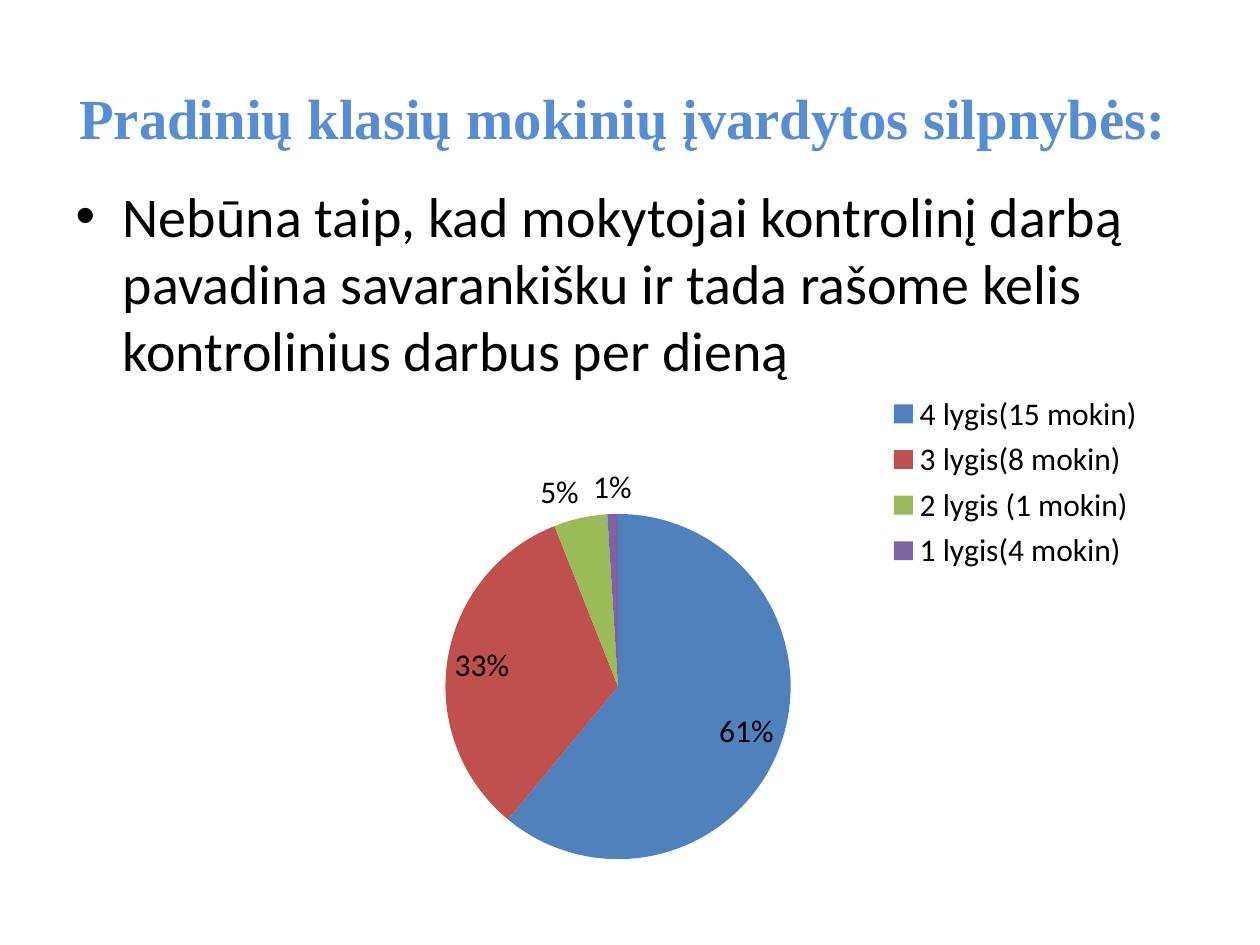
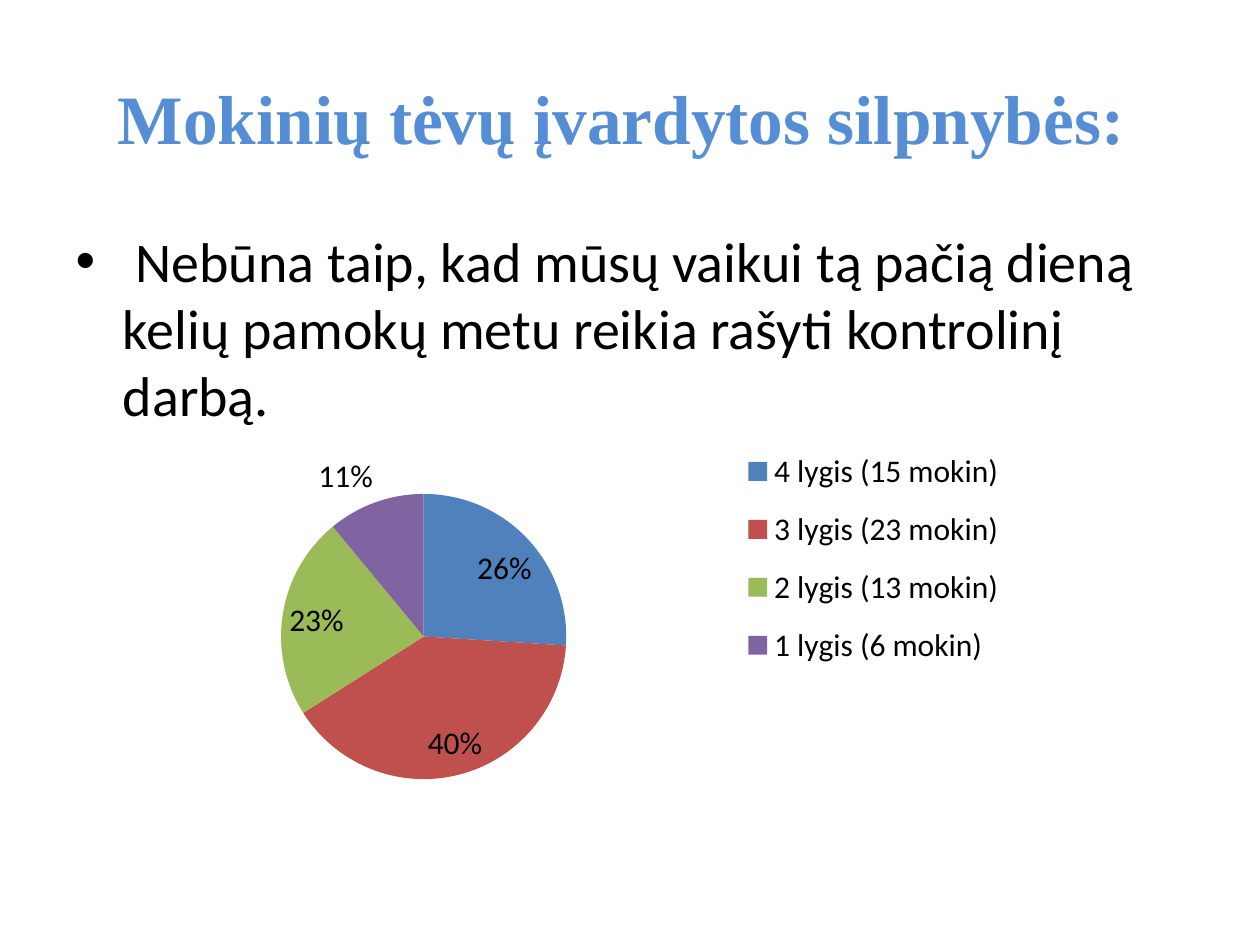
from dataclasses import dataclass

from lxml.etree import SubElement
from pptx import Presentation
from pptx.chart.data import CategoryChartData
from pptx.dml.color import RGBColor
from pptx.enum.chart import XL_CHART_TYPE as ChartType
from pptx.enum.chart import XL_LABEL_POSITION as LabelPos
from pptx.enum.chart import XL_LEGEND_POSITION as LegendPos
from pptx.enum.text import MSO_ANCHOR as Anchor
from pptx.enum.text import MSO_AUTO_SIZE as AutoSize
from pptx.enum.text import PP_ALIGN as Align
from pptx.oxml.ns import qn
from pptx.util import Inches, Pt

GRID = 10  # columns and rows on a slide


@dataclass(frozen=True)
class Theme:
    title_font: str = "Times New Roman"
    body_font: str = "Calibri"
    title_color: str = "558ED5"
    text_color: str = "000000"
    background: str = "FFFFFF"
    slices: tuple = ("4F81BD", "C0504D", "9BBB59", "8064A2")
    body_size: float = 32
    chart_size: float = 18


def style_font(font, name, size, color, bold=False):
    font.name, font.size, font.bold = name, Pt(size), bold
    font.color.rgb = RGBColor.from_string(color)


def write(shape, text, *, align=None, anchor=None, **font):
    tf = shape.text_frame
    tf.word_wrap, tf.auto_size = True, AutoSize.NONE
    if anchor is not None:
        tf.vertical_anchor = anchor
    p = tf.paragraphs[0]
    p.alignment = align
    r = p.add_run()
    r.text = text
    style_font(r.font, **font)


def set_layout(parent, index, box, inner=False):
    """Place a chart part by hand; box is x, y, w, h as shares of the chart."""
    for old in parent.findall(qn("c:layout")):
        parent.remove(old)
    layout = SubElement(parent, qn("c:layout"))
    parent.insert(index, layout)
    manual = SubElement(layout, qn("c:manualLayout"))
    settings = [("layoutTarget", "inner")] if inner else []
    settings += [("xMode", "edge"), ("yMode", "edge"), *zip("xywh", box)]
    for tag, value in settings:
        SubElement(manual, qn(f"c:{tag}")).set("val", str(value))


class Deck:
    def __init__(self, theme):
        self.theme = theme
        self.prs = Presentation()
        self.prs.slide_width, self.prs.slide_height = Inches(10), Inches(7.5)
        self.s = None

    def area(self, col, row, cols, rows):
        cw, rh = self.prs.slide_width / GRID, self.prs.slide_height / GRID
        return [round(v) for v in (col * cw, row * rh, cols * cw, rows * rh)]

    def place(self, sp, box):
        sp.left, sp.top, sp.width, sp.height = self.area(*box)

    def new_slide(self):
        self.s = self.prs.slides.add_slide(self.prs.slide_layouts[1])
        fill = self.s.background.fill
        fill.solid()
        fill.fore_color.rgb = RGBColor.from_string(self.theme.background)

    def title(self, text, size):
        sp = self.s.shapes.title
        self.place(sp, (0.5, 0.4, 9, 1.67))
        write(sp, text, align=Align.CENTER, anchor=Anchor.MIDDLE, size=size, bold=True,
              name=self.theme.title_font, color=self.theme.title_color)

    def body(self, text, row):
        sp = self.s.placeholders[1]
        self.place(sp, (0.5, row, 9, 8.93 - row))
        write(sp, text, name=self.theme.body_font, size=self.theme.body_size,
              color=self.theme.text_color)

    def pie(self, box, levels, plot_box, legend_box):
        data = CategoryChartData()
        data.categories = levels.keys()
        data.add_series("Series 1", levels.values())
        chart = self.s.shapes.add_chart(ChartType.PIE, *self.area(*box), data).chart
        style_font(chart.font, self.theme.body_font, self.theme.chart_size,
                   self.theme.text_color)
        chart.has_title = False

        plot = chart.plots[0]
        plot.vary_by_categories = True
        for i, color in enumerate(self.theme.slices):
            fill = plot.series[0].points[i].format.fill
            fill.solid()
            fill.fore_color.rgb = RGBColor.from_string(color)
        plot.has_data_labels = True
        labels = plot.data_labels
        labels.show_percentage, labels.show_value = True, False
        labels.number_format, labels.number_format_is_linked = "0%", False
        labels.position = LabelPos.BEST_FIT

        chart.has_legend = True
        legend = chart.legend
        legend.position, legend.include_in_layout = LegendPos.TOP, False
        chart_xml = chart.element
        set_layout(chart_xml.find(".//" + qn("c:plotArea")), 0, plot_box, inner=True)
        set_layout(chart_xml.find(".//" + qn("c:legend")), 1, legend_box)


def main():
    deck = Deck(Theme())

    deck.new_slide()
    deck.title("Pradinių klasių mokinių įvardytos silpnybės: ", 32.4)
    deck.body("Nebūna taip, kad mokytojai kontrolinį darbą pavadina savarankišku "
              "ir tada rašome kelis kontrolinius darbus per dieną", row=1.85)
    deck.pie((1.22, 3.43, 8.19, 6.09),
             {"4 lygis(15 mokin)": 61, "3 lygis(8 mokin)": 33,
              "2 lygis (1 mokin)": 5, "1 lygis(4 mokin)": 1},
             plot_box=(0, 0.33, 0.9, 0.6), legend_box=(0.69, 0.11, 0.29, 0.33))

    deck.new_slide()
    deck.title("Mokinių tėvų įvardytos silpnybės: ", 39.6)
    deck.body("\N{NO-BREAK SPACE}Nebūna taip, kad mūsų vaikui tą pačią dieną kelių pamokų "
              "metu reikia rašyti kontrolinį darbą.", row=2.33)
    deck.pie((0.2, 2.8, 8.11, 5.92),
             {"4 lygis (15 mokin)": 26, "3 lygis (23 mokin)": 40,
              "2 lygis (13 mokin)": 23, "1 lygis (6 mokin)": 11},
             plot_box=(0, 0.41, 0.78, 0.51), legend_box=(0.68, 0.3, 0.3, 0.45))

    deck.prs.save("out.pptx")


if __name__ == "__main__":
    main()
